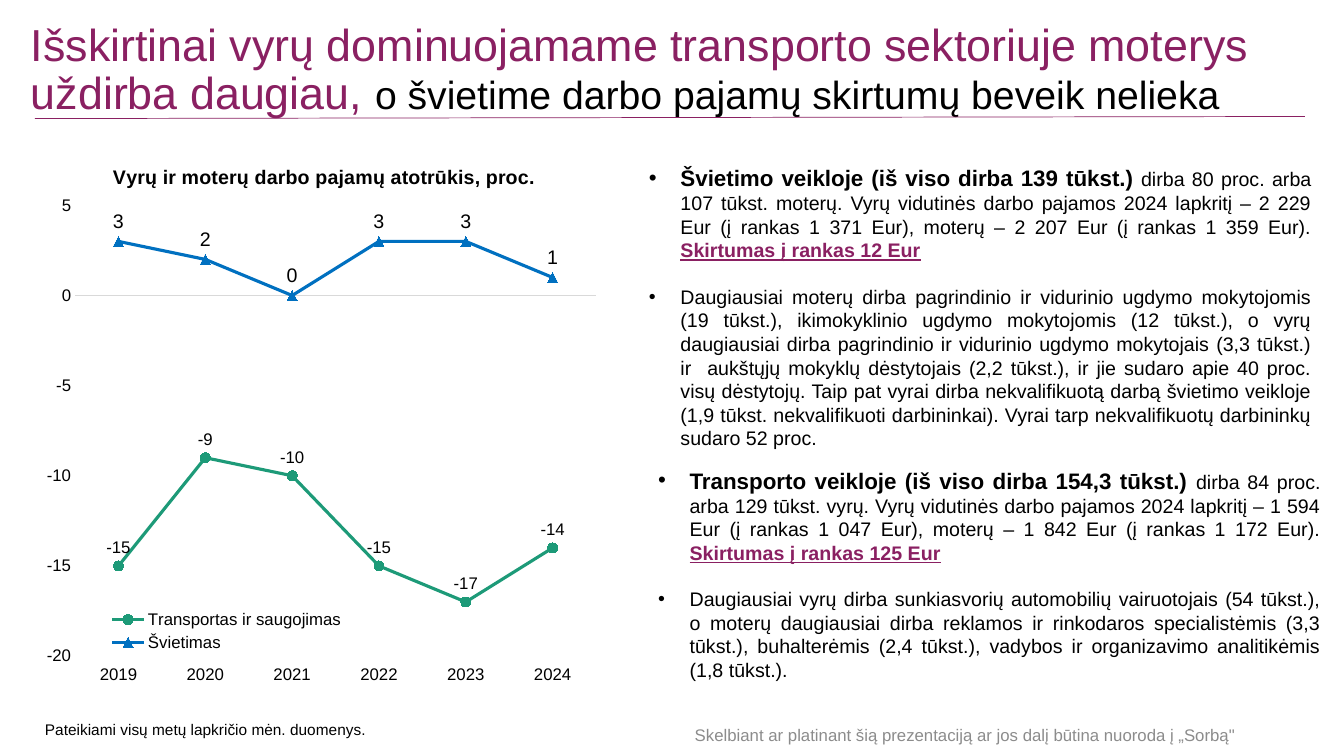
from lxml import etree
from pptx import Presentation
from pptx.chart import data as chart_data
from pptx.dml.color import RGBColor
from pptx.enum import chart as ch, shapes, text
from pptx.oxml import parse_xml
from pptx.oxml.ns import nsdecls, qn
from pptx.util import Pt

PLUM = RGBColor(0x8A, 0x20, 0x62)
BLACK = RGBColor(0, 0, 0)
GREY = RGBColor(0x8C, 0x8C, 0x8C)
AXIS_GREY = RGBColor(0xD9, 0xD9, 0xD9)
GREEN = RGBColor(0x1D, 0x9A, 0x78)
BLUE = RGBColor(0, 0x70, 0xC0)
MARKER_BLUE = RGBColor(0x1D, 0x6F, 0xA9)

LEAD = {"size": Pt(16), "bold": True}
BODY = {"size": Pt(14)}
RESULT = {"size": Pt(14), "bold": True, "underline": True}

EDUCATION = [
    [("Švietimo veikloje (iš viso dirba 139 tūkst.)", LEAD, BLACK),
     (" dirba 80 proc. arba 107 tūkst. moterų. Vyrų vidutinės darbo pajamos 2024 lapkritį "
      "– 2 229 Eur (į rankas 1 371 Eur), moterų – 2 207 Eur (į rankas 1 359 Eur). ", BODY, BLACK),
     ("Skirtumas į rankas 12 Eur", RESULT, PLUM)],
    [("Daugiausiai moterų dirba pagrindinio ir vidurinio ugdymo mokytojomis (19 tūkst.), "
      "ikimokyklinio ugdymo mokytojomis (12 tūkst.), o vyrų daugiausiai dirba pagrindinio ir "
      "vidurinio ugdymo mokytojais (3,3 tūkst.) ir  aukštųjų mokyklų dėstytojais (2,2 tūkst.), "
      "ir jie sudaro apie 40 proc. visų dėstytojų. Taip pat vyrai dirba nekvalifikuotą darbą "
      "švietimo veikloje (1,9 tūkst. nekvalifikuoti darbininkai). Vyrai tarp nekvalifikuotų "
      "darbininkų sudaro 52 proc.", BODY, BLACK)],
]
TRANSPORT = [
    [("Transporto veikloje (iš viso dirba 154,3 tūkst.) ", LEAD, BLACK),
     ("dirba 84 proc. arba 129 tūkst. vyrų. Vyrų vidutinės darbo pajamos 2024 lapkritį "
      "– 1 594 Eur (į rankas 1 047 Eur), moterų – 1 842 Eur (į rankas 1 172 Eur). ", BODY, BLACK),
     ("Skirtumas į rankas 125 Eur", RESULT, PLUM)],
    [("Daugiausiai vyrų dirba sunkiasvorių automobilių vairuotojais (54 tūkst.), o moterų "
      "daugiausiai dirba reklamos ir rinkodaros specialistėmis (3,3 tūkst.), buhalterėmis "
      "(2,4 tūkst.), vadybos ir organizavimo analitikėmis (1,8 tūkst.).", BODY, BLACK)],
]
YEARS = ["2019", "2020", "2021", "2022", "2023", "2024"]
GAPS = [
    ("Transportas ir saugojimas", (-15, -9, -10, -15, -17, -14),
     GREEN, GREEN, ch.XL_MARKER_STYLE.CIRCLE, 12),
    ("Švietimas", (3, 2, 0, 3, 3, 1),
     BLUE, MARKER_BLUE, ch.XL_MARKER_STYLE.TRIANGLE, 14),
]


def set_all(target, values):
    for key, value in values.items():
        setattr(target, key, value)


def set_font(font, color, values):
    set_all(font, {"name": "Arial", **values})
    font.color.rgb = color


def add_text(slide, box, paragraphs, frame_format, paragraph_format):
    frame = slide.shapes.add_textbox(*map(Pt, box)).text_frame
    set_all(frame, {"word_wrap": True, **frame_format})
    for index, runs in enumerate(paragraphs):
        paragraph = frame.add_paragraph() if index else frame.paragraphs[0]
        set_all(paragraph, paragraph_format)
        for words, values, color in runs:
            run = paragraph.add_run()
            run.text = words
            set_font(run.font, color, values)
    return frame


def add_heading(slide, box):
    left, top, width, height = box
    add_text(slide, box, [[
        ("Išskirtinai vyrų dominuojamame transporto sektoriuje moterys uždirba daugiau, ",
         {"size": Pt(32)}, PLUM),
        ("o švietime darbo pajamų skirtumų beveik nelieka", {"size": Pt(28)}, BLACK),
    ]], {"vertical_anchor": text.MSO_ANCHOR.MIDDLE}, {"line_spacing": 0.9})
    rule = slide.shapes.add_connector(
        shapes.MSO_CONNECTOR.STRAIGHT, Pt(left + 10), Pt(top + height + 2),
        Pt(left + width - 3), Pt(top + height + 0.5))
    rule.line.color.rgb = PLUM
    rule.line.width = Pt(0.5)
    etree.SubElement(rule._element.spPr, qn("a:effectLst"))


def add_findings(slide, box, paragraphs):
    frame = add_text(slide, box, paragraphs, {},
                     {"alignment": text.PP_ALIGN.JUSTIFY})
    frame.paragraphs[1].space_before = Pt(16.5)
    for paragraph in frame.paragraphs:
        properties = paragraph._p.get_or_add_pPr()
        properties.set("marL", str(Pt(22.5)))
        properties.set("indent", str(-Pt(22.5)))
        properties.append(parse_xml(f'<a:buFont {nsdecls("a")} typeface="Arial"/>'))
        properties.append(parse_xml(f'<a:buChar {nsdecls("a")} char="•"/>'))


def place(element, **fractions):
    for old in element.findall(qn("c:layout")):
        element.remove(old)
    target = '<c:layoutTarget val="inner"/>' if element.tag == qn("c:plotArea") else ""
    modes = "".join(f'<c:{side}Mode val="edge"/>' for side in "xy")
    sizes = "".join(f'<c:{key} val="{value}"/>' for key, value in fractions.items())
    layout = parse_xml(f'<c:layout {nsdecls("c")}><c:manualLayout>{target}{modes}{sizes}'
                       '</c:manualLayout></c:layout>')
    before = [child for child in element if child.tag in (qn("c:tx"), qn("c:legendPos"))]
    element.insert(len(before), layout)


def add_gap_chart(slide, box):
    gaps = chart_data.CategoryChartData(number_format="#,##0")
    gaps.categories = YEARS
    for name, values, *_ in GAPS:
        gaps.add_series(name, values)
    chart = slide.shapes.add_chart(ch.XL_CHART_TYPE.LINE_MARKERS, *map(Pt, box), gaps).chart
    set_font(chart.font, BLACK, {"size": Pt(12)})

    title = chart.chart_title
    title.text_frame.text = "Vyrų ir moterų darbo pajamų atotrūkis, proc."
    set_font(title.text_frame.paragraphs[0].runs[0].font, BLACK, {"size": Pt(14), "bold": True})
    place(title._element, x=0.13, y=0.03)

    chart.has_legend = True
    set_all(chart.legend, {"position": ch.XL_LEGEND_POSITION.BOTTOM, "include_in_layout": False})
    set_font(chart.legend.font, BLACK, {"size": Pt(12)})
    place(chart.legend._element, x=0.12, y=0.83, w=0.43, h=0.09)
    place(chart._chartSpace.chart.plotArea, x=0.07, y=0.11, w=0.91, h=0.81)

    plain = {"major_tick_mark": ch.XL_TICK_MARK.NONE, "minor_tick_mark": ch.XL_TICK_MARK.NONE,
             "has_major_gridlines": False}
    years, percent = chart.category_axis, chart.value_axis
    set_all(years, {**plain, "tick_label_position": ch.XL_TICK_LABEL_POSITION.LOW})
    set_all(percent, {**plain, "minimum_scale": -20, "maximum_scale": 5, "major_unit": 5})
    set_all(percent.tick_labels, {"number_format": "0", "number_format_is_linked": False})
    for axis in (years, percent):
        set_font(axis.tick_labels.font, BLACK, {"size": Pt(12)})
    years.format.line.color.rgb = AXIS_GREY
    years.format.line.width = Pt(0.75)
    percent.format.line.fill.background()

    plot = chart.plots[0]
    plot.vary_by_categories = False
    for series, (_, _, color, marker_color, marker, label_size) in zip(plot.series, GAPS):
        series.smooth = False
        series.format.line.color.rgb = color
        series.format.line.width = Pt(2.25)
        set_all(series.marker, {"style": marker, "size": 7})
        series.marker.format.fill.solid()
        series.marker.format.fill.fore_color.rgb = marker_color
        series.marker.format.line.color.rgb = marker_color
        set_all(series.data_labels, {
            "show_value": True, "position": ch.XL_LABEL_POSITION.ABOVE,
            "number_format": "#,##0", "number_format_is_linked": False})
        set_font(series.data_labels.font, BLACK, {"size": Pt(label_size)})


def add_footer(slide, note_box, credit_box):
    add_text(slide, note_box,
             [[("Pateikiami visų metų lapkričio mėn. duomenys.", {"size": Pt(11)}, BLACK)]], {}, {})
    add_text(slide, credit_box,
             [[("Skelbiant ar platinant šią prezentaciją ar jos dalį būtina nuoroda į „Sorbą\"",
                {"size": Pt(12)}, GREY)]],
             {"vertical_anchor": text.MSO_ANCHOR.MIDDLE}, {"alignment": text.PP_ALIGN.CENTER})


def main():
    deck = Presentation()
    set_all(deck, {"slide_width": Pt(960), "slide_height": Pt(540)})
    slide = deck.slides.add_slide(deck.slide_layouts[6])
    add_heading(slide, (15, 18.7, 920, 64))
    add_gap_chart(slide, (25, 103, 409, 397.5))
    add_findings(slide, (456.5, 113.8, 487.5, 213), EDUCATION)
    add_findings(slide, (463, 329.8, 487.5, 163), TRANSPORT)
    add_footer(slide, (25, 510.5, 458, 21), (471, 510.5, 437, 29))
    deck.save("out.pptx")


if __name__ == "__main__":
    main()
